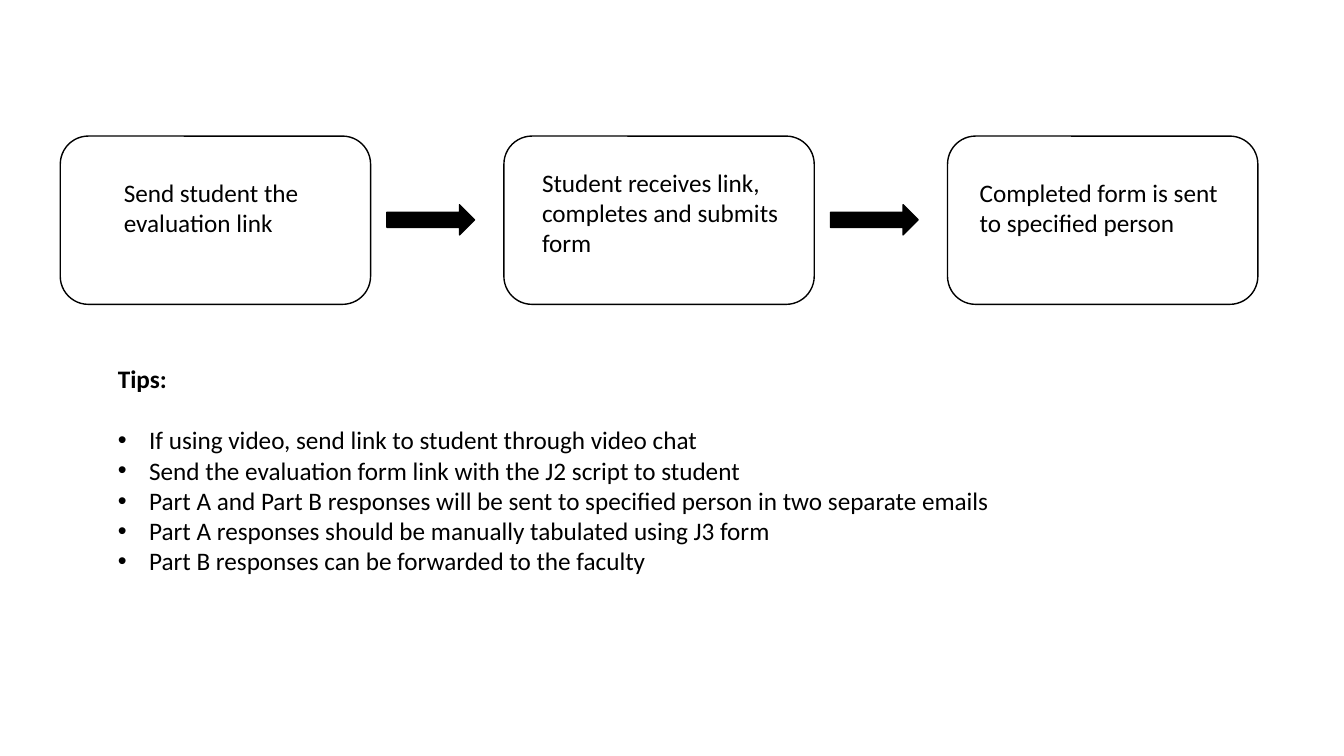
from lxml.etree import SubElement
from pptx import Presentation
from pptx.dml.color import RGBColor
from pptx.enum.shapes import MSO_SHAPE as Shape
from pptx.enum.text import MSO_AUTO_SIZE as AutoSize, PP_ALIGN as Align
from pptx.oxml.ns import qn
from pptx.util import Cm, Pt


def colour(code):
    return RGBColor.from_string(code)


class FlowSlide:
    ink = "000000"
    font = {"name": "Calibri", "size": Pt(18), "bold": False}
    indent = Cm(0.79)

    def __init__(self, deck):
        self.slide = deck.slides.add_slide(deck.slide_layouts[6])

    def shape(self, kind, left, top, width, height, fill=None):
        outline = self.slide.shapes.add_shape(kind, Cm(left), Cm(top), Cm(width), Cm(height))
        outline.shadow.inherit = False
        if fill:
            outline.fill.solid()
            outline.fill.fore_color.rgb = colour(fill)
        else:
            outline.fill.background()
        outline.line.color.rgb = colour(self.ink)
        outline.line.width = Pt(1)

    def text(self, left, top, width, height):
        box = self.slide.shapes.add_textbox(Cm(left), Cm(top), Cm(width), Cm(height))
        box.text_frame.word_wrap = True
        box.text_frame.auto_size = AutoSize.SHAPE_TO_FIT_TEXT
        return box.text_frame

    def line(self, frame, words, bullet=False, space=0, **extra):
        paragraph = frame.paragraphs[0]
        if paragraph.text:
            paragraph = frame.add_paragraph()
        paragraph.alignment = Align.LEFT
        if space:
            paragraph.space_before = Pt(space)
        if bullet:
            properties = paragraph._p.get_or_add_pPr()
            properties.set("marL", str(self.indent))
            properties.set("indent", str(-self.indent))
            SubElement(properties, qn("a:buFont"), typeface="Arial")
            SubElement(properties, qn("a:buChar"), char="•")
        run = paragraph.add_run()
        run.text = words
        for name, value in {**self.font, **extra}.items():
            setattr(run.font, name, value)
        run.font.color.rgb = colour(self.ink)


STEPS = [
    (["Send student the", "evaluation link"], 1.35, 4.34, 5.23, 1.8),
    (["Student receives link,", "completes and submits", "form"], 0.71, 4.09, 6.78, 2.57),
    (["Completed form is sent to specified person"], 0.56, 4.34, 6.71, 2.57),
]
TIPS = [
    "If using video, send link to student through video chat",
    "Send the evaluation form link with the J2 script to student",
    "Part A and Part B responses will be sent to specified person in two separate emails",
    "Part A responses should be manually tabulated using J3 form",
    "Part B responses can be forwarded to the faculty",
]
FIRST_STEP, STEP_PITCH = 1.52, 11.18


def main():
    deck = Presentation()
    deck.slide_width, deck.slide_height = Cm(33.87), Cm(19.05)
    flow = FlowSlide(deck)

    for index, (lines, inset, top, width, height) in enumerate(STEPS):
        left = FIRST_STEP + index * STEP_PITCH
        flow.shape(Shape.ROUNDED_RECTANGLE, left, 3.43, 7.82, 4.24)
        if index < len(STEPS) - 1:
            flow.shape(Shape.RIGHT_ARROW, left + 8.23, 5.16, 2.21, 0.76, flow.ink)
        label = flow.text(left + inset, top, width, height)
        for words in lines:
            flow.line(label, words)

    tips = flow.text(2.72, 9.04, 27.25, 6.4)
    flow.line(tips, "Tips:", bold=True)
    for index, tip in enumerate(TIPS):
        flow.line(tips, tip, bullet=True, space=0 if index else 22)

    deck.save("out.pptx")


if __name__ == "__main__":
    main()
